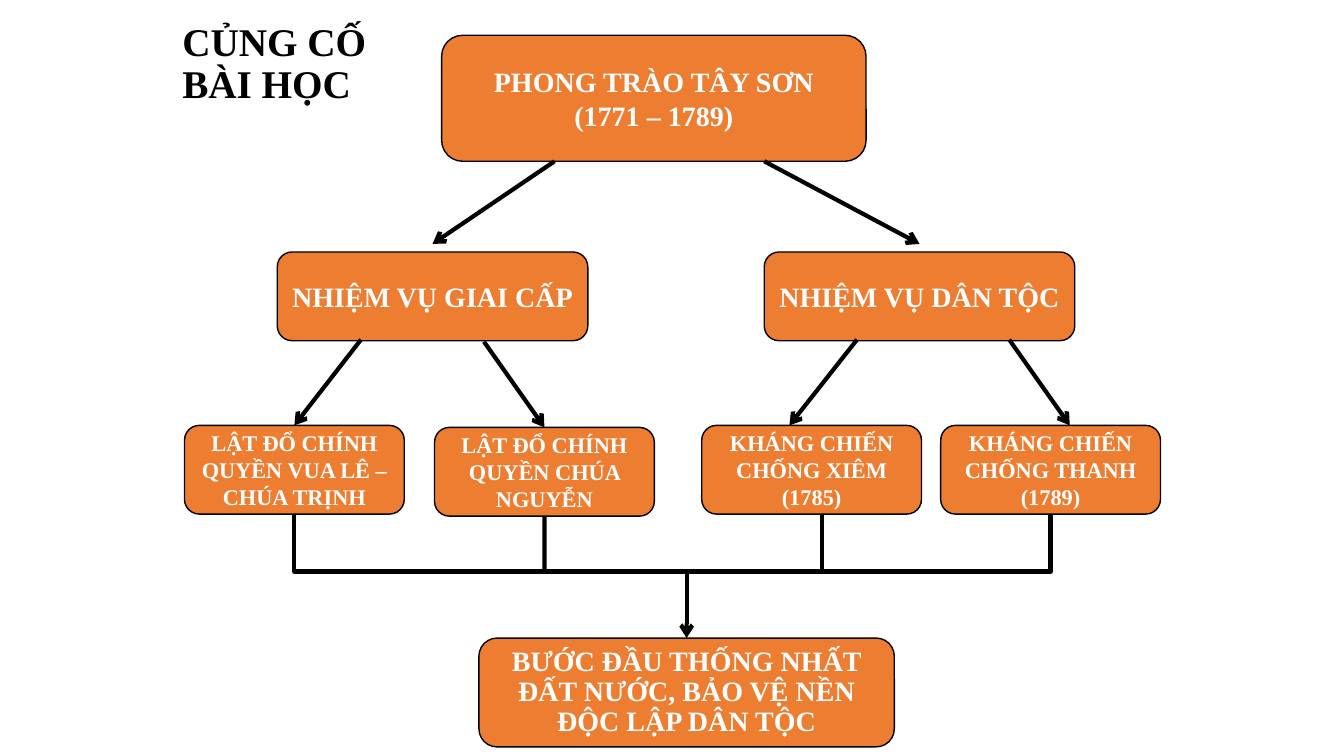
from dataclasses import dataclass

from lxml import etree
from pptx import Presentation
from pptx.dml.color import RGBColor
from pptx.enum.shapes import MSO_CONNECTOR, MSO_SHAPE
from pptx.enum.text import MSO_ANCHOR, PP_ALIGN
from pptx.oxml.ns import qn
from pptx.util import Inches, Pt

ROUND = MSO_SHAPE.ROUNDED_RECTANGLE
STRAIGHT = MSO_CONNECTOR.STRAIGHT
MIDDLE = MSO_ANCHOR.MIDDLE
LEFT, CENTER = PP_ALIGN.LEFT, PP_ALIGN.CENTER
TOP, BOTTOM = 0, 2

FONT = "Times New Roman"
COLORS = {"ink": "000000", "box": "ED7D31", "text": "FFFFFF"}


@dataclass
class Box:
    name: str
    left: float
    top: float
    width: float
    height: float
    text: str
    size: int = 20
    space: float = 1.0


@dataclass
class Link:
    """A straight line; start and goal name the boxes it is joined to."""
    x1: float
    y1: float
    x2: float
    y2: float
    start: str = ""
    goal: str = ""
    arrow: bool = True


TASK = (3.08, 0.88)
EVENT = (2.18, 0.88)
BOXES = [
    Box("root", 4.38, 0.35, 4.21, 1.25, "PHONG TRÀO TÂY SƠN\n(1771 – 1789)"),
    Box("class", 2.75, 2.5, *TASK, "NHIỆM VỤ GIAI CẤP"),
    Box("nation", 7.58, 2.5, *TASK, "NHIỆM VỤ DÂN TỘC"),
    Box("north", 1.83, 4.22, *EVENT, "LẬT ĐỔ CHÍNH QUYỀN VUA LÊ – CHÚA TRỊNH", 16),
    Box("south", 4.31, 4.24, *EVENT, "LẬT ĐỔ CHÍNH QUYỀN CHÚA NGUYỄN", 16),
    Box("siam", 6.96, 4.22, *EVENT, "KHÁNG CHIẾN CHỐNG XIÊM\n(1785)", 16),
    Box("qing", 9.33, 4.22, *EVENT, "KHÁNG CHIẾN CHỐNG THANH\n(1789)", 16),
    Box("result", 4.75, 6.33, 4.12, 1.08,
        "BƯỚC ĐẦU THỐNG NHẤT ĐẤT NƯỚC, BẢO VỆ NỀN ĐỘC LẬP DÂN TỘC", space=0.9),
]
LINKS = [
    Link(7.58, 1.6, 9.12, 2.42),
    Link(5.5, 1.6, 4.29, 2.42),
    Link(3.58, 3.37, 2.92, 4.22, goal="north"),
    Link(4.8, 3.39, 5.4, 4.24, goal="south"),
    Link(8.5, 3.37, 7.83, 4.22),
    Link(10.01, 3.37, 10.61, 4.22),
    Link(5.4, 5.12, 5.4, 5.68, start="south", arrow=False),
    Link(8.15, 5.1, 8.15, 5.68, arrow=False),
    Link(6.81, 5.67, 6.81, 6.33, goal="result"),
]
BRACKET = [(10.42, 5.1), (10.42, 5.67), (2.92, 5.67), (2.92, 5.1)]


def color(name: str) -> RGBColor:
    return RGBColor.from_string(COLORS[name])


def write(frame, text: str, *, size: int, ink: str, align=CENTER,
          space: float = 1.0) -> None:
    frame.word_wrap = True
    frame.vertical_anchor = MIDDLE
    frame.text = text
    for par in frame.paragraphs:
        par.alignment = align
        par.line_spacing = space
        for run in par.runs:
            run.font.name = FONT
            run.font.size = Pt(size)
            run.font.bold = True
            run.font.color.rgb = color(ink)


def stroke(line, width: float) -> None:
    line.color.rgb = color("ink")
    line.width = Pt(width)


def draw_box(shapes, box: Box):
    shape = shapes.add_shape(ROUND, Inches(box.left), Inches(box.top),
                             Inches(box.width), Inches(box.height))
    shape.shadow.inherit = False
    shape.fill.solid()
    shape.fill.fore_color.rgb = color("box")
    stroke(shape.line, 1)
    write(shape.text_frame, box.text, size=box.size, ink="text", space=box.space)
    return shape


def draw_link(shapes, link: Link, drawn: dict) -> None:
    line = shapes.add_connector(STRAIGHT, Inches(link.x1), Inches(link.y1),
                                Inches(link.x2), Inches(link.y2))
    if link.start:
        line.begin_connect(drawn[link.start], BOTTOM)
    if link.goal:
        line.end_connect(drawn[link.goal], TOP)
    stroke(line.line, 3)
    props = line.element.spPr
    if link.arrow:
        etree.SubElement(props.find(qn("a:ln")), qn("a:tailEnd"), type="arrow")
    etree.SubElement(props, qn("a:effectLst"))


def draw_path(shapes, points: list[tuple[float, float]]) -> None:
    spots = [(Inches(x), Inches(y)) for x, y in points]
    form = shapes.build_freeform(*spots[0])
    form.add_line_segments(spots[1:], close=False)
    shape = form.convert_to_shape()
    shape.shadow.inherit = False
    shape.fill.background()
    stroke(shape.line, 3)


def main() -> None:
    deck = Presentation()
    deck.slide_width, deck.slide_height = Inches(13.33), Inches(7.5)
    shapes = deck.slides.add_slide(deck.slide_layouts[6]).shapes

    title = shapes.add_textbox(Inches(1.71), Inches(0.02), Inches(2.42), Inches(1.25))
    write(title.text_frame, "CỦNG CỐ\vBÀI HỌC", size=28, ink="ink",
          align=LEFT, space=0.9)

    drawn = {box.name: draw_box(shapes, box) for box in BOXES}
    for link in LINKS:
        draw_link(shapes, link, drawn)
    draw_path(shapes, BRACKET)
    deck.save("out.pptx")


if __name__ == "__main__":
    main()
